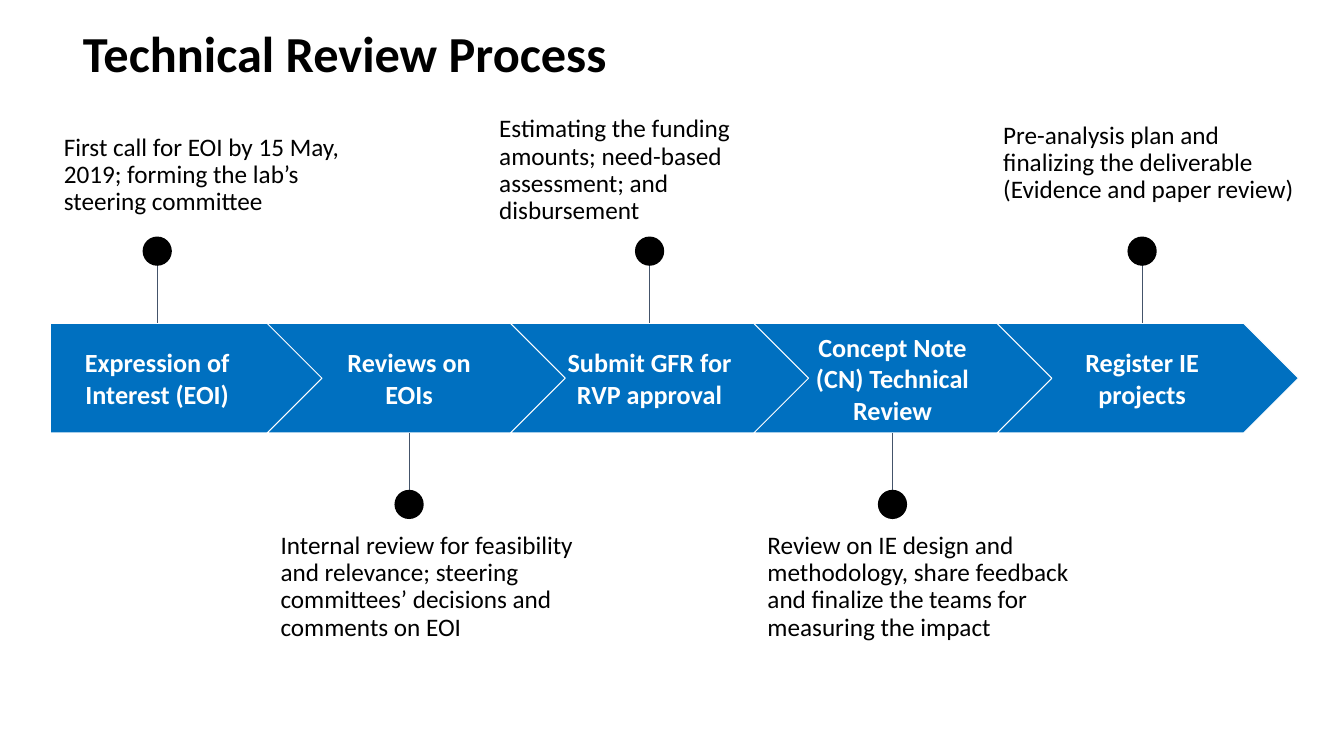
"""Build the Technical Review Process slide: five chevron steps with notes above and below."""
from lxml import etree
from pptx import Presentation
from pptx.dml.color import RGBColor
from pptx.enum import shapes, text
from pptx.oxml import ns
from pptx.util import Pt

TITLE = "Technical Review Process"
STEPS = [
    {"label": "Expression of Interest (EOI)", "center": 112.3, "label_width": 152.6,
     "note": "First call for EOI by 15 May, 2019; forming the lab’s steering committee",
     "note_at": (36, 86.4)},
    {"label": "Reviews on EOIs", "center": 292.2, "label_width": 138.2,
     "note": "Internal review for feasibility and relevance; steering committees’ "
             "decisions and comments on EOI",
     "note_at": (190.8, 370.8)},
    {"label": "Submit GFR for RVP approval", "center": 464, "label_width": 138.2,
     "note": "Estimating the funding amounts; need-based assessment; and disbursement",
     "note_at": (347, 73.4)},
    {"label": "Concept Note (CN) Technical Review", "center": 637.5, "label_width": 138.2,
     "note": "Review on IE design and methodology, share feedback and finalize the teams "
             "for measuring the impact",
     "note_at": (538.6, 370.8)},
    {"label": "Register IE projects", "center": 815.8, "label_width": 138.2,
     "note": "Pre-analysis plan and finalizing the deliverable (Evidence and paper review)",
     "note_at": (707, 77.8)},
]

BLUE, WHITE, BLACK, SLATE = "0070C0", "FFFFFF", "000000", "44546A"
BAND_TOP, BAND_HEIGHT = 231, 78.3
BAND_BOTTOM = BAND_TOP + BAND_HEIGHT
FIRST_LEFT, FIRST_WIDTH = 36, 196.6
CHEVRON_LEFT, CHEVRON_WIDTH, CHEVRON_STEP = 190.8, 215.3, 173.8
LABEL_HEIGHT = 49.7
NOTE_SIZE = (235.4, 95)
STEM, DOT = 58, 20.9

LABEL_FORMAT = {"size": Pt(18.7), "bold": True}
NOTE_FORMAT = {"size": Pt(18), "bold": False}
TITLE_FORMAT = {"size": Pt(36), "bold": True}
LABEL_PARA = {"alignment": text.PP_ALIGN.CENTER}
NOTE_PARA = {"alignment": text.PP_ALIGN.LEFT, "line_spacing": 0.9, "space_after": Pt(21.3)}
TITLE_PARA = {"alignment": text.PP_ALIGN.LEFT, "line_spacing": 0.9}
PADDING = {f"margin_{side}": Pt(9.6) for side in ("left", "top", "right", "bottom")}
LABEL_FRAME = {**PADDING, "word_wrap": True, "vertical_anchor": text.MSO_ANCHOR.MIDDLE}
NOTE_FRAME = {**PADDING, "word_wrap": True, "vertical_anchor": text.MSO_ANCHOR.TOP}
TITLE_FRAME = {"word_wrap": False, "vertical_anchor": text.MSO_ANCHOR.TOP,
               "auto_size": text.MSO_AUTO_SIZE.SHAPE_TO_FIT_TEXT}


def color(value):
    return RGBColor.from_string(value)


def apply(target, values):
    for name, value in values.items():
        setattr(target, name, value)


def write(box, words, ink, frame_format, para_format, font_format):
    apply(box.text_frame, frame_format)
    para = box.text_frame.paragraphs[0]
    apply(para, para_format)
    span = para.add_run()
    span.text = words
    apply(span.font, {"name": "Calibri", **font_format})
    span.font.color.rgb = color(ink)


def add_filled(page, kind, left, top, width, height, fill, line=None):
    shape = page.shapes.add_shape(kind, Pt(left), Pt(top), Pt(width), Pt(height))
    shape.shadow.inherit = False
    shape.fill.solid()
    shape.fill.fore_color.rgb = color(fill)
    if line:
        shape.line.color.rgb = color(line)
        shape.line.width = Pt(0.75)
    else:
        shape.line.fill.background()


def add_text(page, left, top, width, height, *content):
    box = page.shapes.add_textbox(Pt(left), Pt(top), Pt(width), Pt(height))
    write(box, *content)


def add_pin(page, center, above):
    start = BAND_TOP if above else BAND_BOTTOM
    end = start - STEM if above else start + STEM
    stem = page.shapes.add_connector(
        shapes.MSO_CONNECTOR.STRAIGHT, Pt(center), Pt(end), Pt(center), Pt(start))
    stem.line.color.rgb = color(SLATE)
    stem.line.width = Pt(0.75)
    etree.SubElement(stem.element.spPr, ns.qn("a:effectLst"))
    dot_middle = 179.4 if above else 360.3
    add_filled(page, shapes.MSO_SHAPE.OVAL, center - DOT / 2, dot_middle - DOT / 2,
               DOT, DOT, BLACK)


def add_step(page, index, step):
    if index == 0:
        kind, left, width = shapes.MSO_SHAPE.PENTAGON, FIRST_LEFT, FIRST_WIDTH
    else:
        kind, width = shapes.MSO_SHAPE.CHEVRON, CHEVRON_WIDTH
        left = CHEVRON_LEFT + (index - 1) * CHEVRON_STEP
    add_filled(page, kind, left, BAND_TOP, width, BAND_HEIGHT, BLUE, WHITE)
    add_text(page, step["center"] - step["label_width"] / 2,
             BAND_TOP + (BAND_HEIGHT - LABEL_HEIGHT) / 2, step["label_width"], LABEL_HEIGHT,
             step["label"], WHITE, LABEL_FRAME, LABEL_PARA, LABEL_FORMAT)
    add_pin(page, step["center"], above=index % 2 == 0)
    add_text(page, *step["note_at"], *NOTE_SIZE,
             step["note"], BLACK, NOTE_FRAME, NOTE_PARA, NOTE_FORMAT)


def main():
    deck = Presentation()
    apply(deck, {"slide_width": Pt(960), "slide_height": Pt(540)})
    page = deck.slides.add_slide(deck.slide_layouts[5])
    title = page.shapes.title
    apply(title, {"left": Pt(52), "top": Pt(17.3), "width": Pt(393), "height": Pt(46.8)})
    write(title, TITLE, BLACK, TITLE_FRAME, TITLE_PARA, TITLE_FORMAT)
    for index, step in enumerate(STEPS):
        add_step(page, index, step)
    deck.save("out.pptx")


if __name__ == "__main__":
    main()
